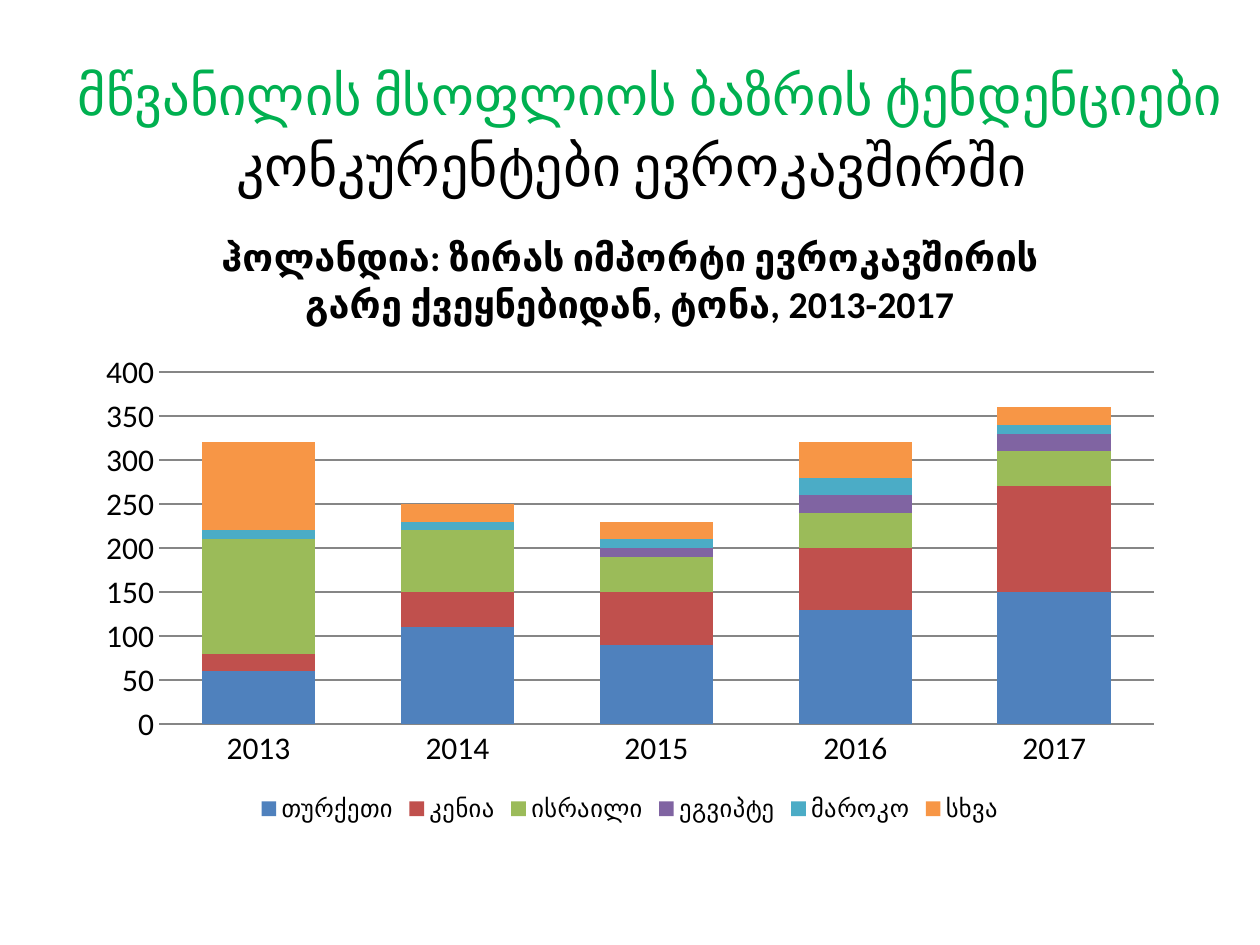
from pptx import Presentation
from pptx.chart.data import CategoryChartData
from pptx.dml.color import RGBColor
from pptx.enum.chart import XL_CHART_TYPE, XL_LEGEND_POSITION, XL_TICK_MARK
from pptx.enum.text import MSO_ANCHOR, PP_ALIGN
from pptx.util import Cm, Pt

FONT = "Calibri"
BLACK = RGBColor(0x00, 0x00, 0x00)
GREEN = RGBColor(0x00, 0xB0, 0x50)
GREY = RGBColor(0x86, 0x86, 0x86)
BLUE = RGBColor(0x4F, 0x81, 0xBD)
RED = RGBColor(0xC0, 0x50, 0x4D)
LIME = RGBColor(0x9B, 0xBB, 0x59)
PURPLE = RGBColor(0x80, 0x64, 0xA2)
TEAL = RGBColor(0x4B, 0xAC, 0xC6)
ORANGE = RGBColor(0xF7, 0x96, 0x46)

YEARS = ["2013", "2014", "2015", "2016", "2017"]
IMPORTS = [
    ("თურქეთი", BLUE, (60, 110, 90, 130, 150)),
    ("კენია", RED, (20, 40, 60, 70, 120)),
    ("ისრაილი", LIME, (130, 70, 40, 40, 40)),
    ("ეგვიპტე", PURPLE, (0, 0, 10, 20, 20)),
    ("მაროკო", TEAL, (10, 10, 10, 20, 10)),
    ("სხვა", ORANGE, (100, 20, 20, 40, 20)),
]


def style(font, size, color=BLACK, bold=False):
    font.name = FONT
    font.size = Pt(size)
    font.bold = bold
    font.color.rgb = color


def add_line(slide, box, text, size, color, anchor):
    frame = slide.shapes.add_textbox(*map(Cm, box)).text_frame
    frame.word_wrap = True
    frame.margin_left = frame.margin_right = 0
    frame.vertical_anchor = anchor
    para = frame.paragraphs[0]
    para.alignment = PP_ALIGN.CENTER
    run = para.add_run()
    run.text = text
    style(run.font, size, color)


def add_bars(slide, box):
    data = CategoryChartData()
    data.categories = YEARS
    for name, color, tons in IMPORTS:
        data.add_series(name, tons)
    chart = slide.shapes.add_chart(
        XL_CHART_TYPE.COLUMN_STACKED, *map(Cm, box), data).chart
    style(chart.font, 18)

    chart.has_title = True
    run = chart.chart_title.text_frame.paragraphs[0].add_run()
    run.text = "ჰოლანდია: ზირას იმპორტი ევროკავშირის გარე ქვეყნებიდან, ტონა, 2013-2017"
    style(run.font, 21.6, bold=True)
    chart.chart_title.include_in_layout = False

    chart.has_legend = True
    chart.legend.position = XL_LEGEND_POSITION.BOTTOM
    chart.legend.include_in_layout = False
    style(chart.legend.font, 14)

    for axis in (chart.category_axis, chart.value_axis):
        axis.major_tick_mark = XL_TICK_MARK.NONE
        axis.minor_tick_mark = XL_TICK_MARK.NONE
        style(axis.tick_labels.font, 18)
    chart.category_axis.format.line.color.rgb = GREY
    scale = chart.value_axis
    scale.minimum_scale = 0
    scale.format.line.fill.background()
    scale.has_major_gridlines = True
    scale.major_gridlines.format.line.color.rgb = GREY

    plot = chart.plots[0]
    plot.gap_width = 75
    plot.overlap = 100
    plot.vary_by_categories = False
    for series, (name, color, tons) in zip(plot.series, IMPORTS):
        series.format.fill.solid()
        series.format.fill.fore_color.rgb = color


def main():
    deck = Presentation()
    deck.slide_width, deck.slide_height = Cm(25.4), Cm(19.05)
    slide = deck.slides.add_slide(deck.slide_layouts[6])
    add_line(slide, (1.3, 2.51, 22.86, 1.8), "კონკურენტები ევროკავშირში",
             32, BLACK, MSO_ANCHOR.TOP)
    add_bars(slide, (1.7, 4.11, 22, 12.6))
    add_line(slide, (1.3, 0.3, 23.62, 3.18), "მწვანილის მსოფლიოს ბაზრის ტენდენციები",
             31.2, GREEN, MSO_ANCHOR.MIDDLE)
    deck.save("out.pptx")


if __name__ == "__main__":
    main()
